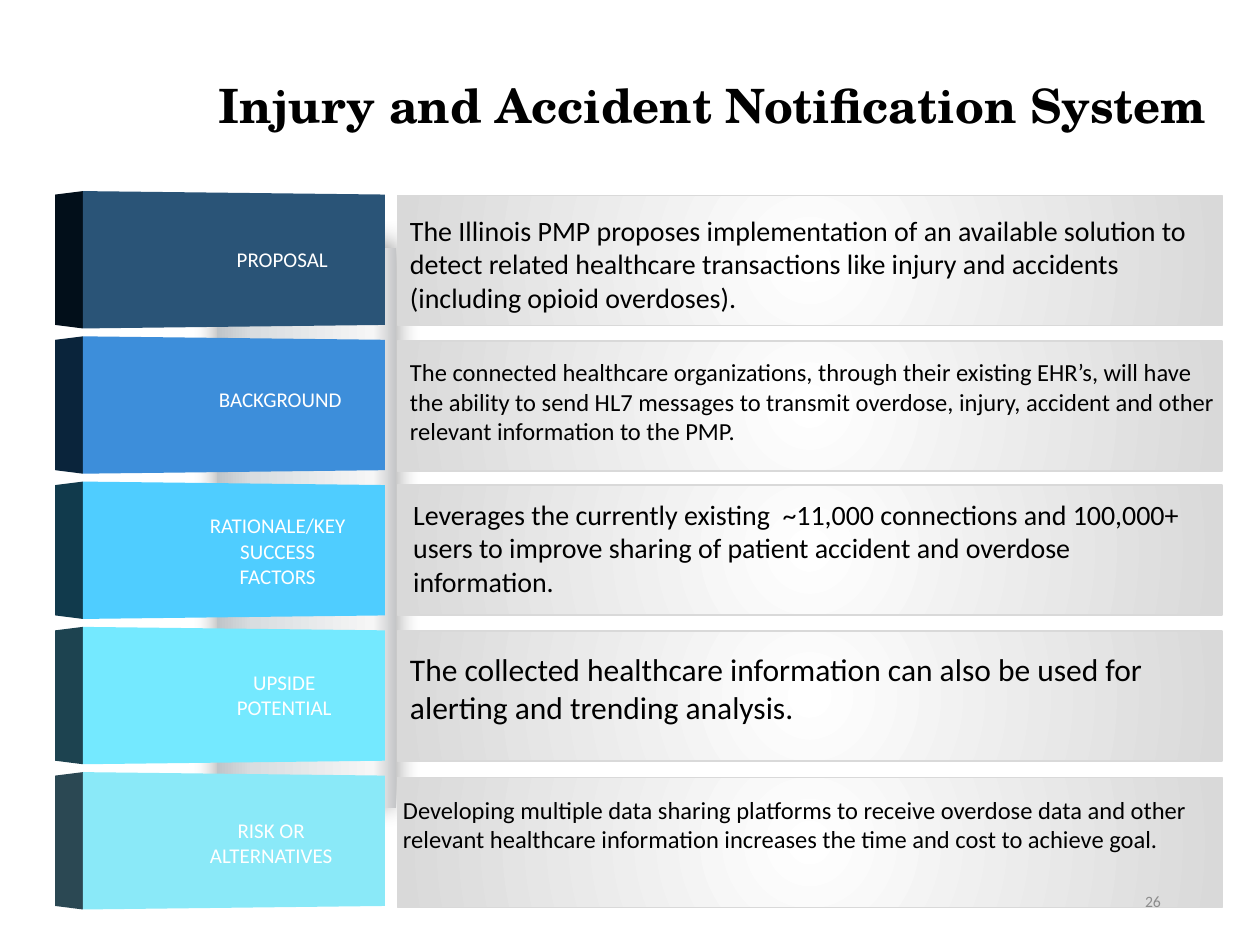
from dataclasses import dataclass

from pptx import Presentation
from pptx.dml.color import RGBColor
from pptx.enum.shapes import MSO_SHAPE
from pptx.enum.text import MSO_ANCHOR, MSO_AUTO_SIZE, PP_ALIGN
from pptx.oxml import parse_xml
from pptx.oxml.ns import nsdecls
from pptx.util import Pt

RECTANGLE = MSO_SHAPE.RECTANGLE
LEFT, CENTER, RIGHT = PP_ALIGN.LEFT, PP_ALIGN.CENTER, PP_ALIGN.RIGHT
TOP, MIDDLE = MSO_ANCHOR.TOP, MSO_ANCHOR.MIDDLE
FIT_SHAPE, NO_FIT = MSO_AUTO_SIZE.SHAPE_TO_FIT_TEXT, MSO_AUTO_SIZE.NONE


@dataclass(frozen=True)
class Theme:
    title_font: str = "TeX Gyre Schola"
    body_font: str = "Calibri"
    title_size: int = 27
    label_size: int = 12
    number_size: int = 9
    ink: str = "000000"
    label_ink: str = "FFFFFF"
    number_ink: str = "8C8C8C"
    panel_line: str = "D9D9D9"
    panel_stops: tuple = ((0, "FFFFFF"), (100, "D9D9D9"))
    spine_stops: tuple = ((0, "BFC4C8"), (20, "D9DDE0"), (87, "F6F6F6"), (100, "C5C6C8"))
    # Front face and side face of each bar
    bars: tuple = (
        ("2A5477", "020F1A"),
        ("3D8EDA", "0A243B"),
        ("4FCDFF", "113A4C"),
        ("74E9FF", "1D4350"),
        ("8AE9F8", "2B4853"),
    )


LINEAR = '<a:lin ang="0" scaled="0"/>'
RADIAL = '<a:path path="circle"><a:fillToRect l="50000" t="50000" r="50000" b="50000"/></a:path>'


class SlideBuilder:
    def __init__(self, slide, theme):
        self.slide = slide
        self.theme = theme

    def gradient_box(self, left, top, width, height, stops, shade, line=None):
        shape = self.slide.shapes.add_shape(RECTANGLE, Pt(left), Pt(top), Pt(width), Pt(height))
        shape.shadow.inherit = False
        shape.fill.background()
        stop_xml = "".join(
            f'<a:gs pos="{position * 1000}"><a:srgbClr val="{color}"/></a:gs>'
            for position, color in stops
        )
        gradient = parse_xml(
            f'<a:gradFill {nsdecls("a")} rotWithShape="1"><a:gsLst>{stop_xml}</a:gsLst>{shade}</a:gradFill>'
        )
        properties = shape._element.spPr
        properties.replace(properties.find("{*}noFill"), gradient)
        if line:
            shape.line.color.rgb = RGBColor.from_string(line)
            shape.line.width = Pt(1)
        else:
            shape.line.fill.background()
        return shape

    def add_shadow(self, shape):
        effects = shape._element.spPr.find("{*}effectLst")
        effects.append(parse_xml(
            f'<a:outerShdw {nsdecls("a")} blurRad="{Pt(14)}" dist="{Pt(3)}" dir="16200000">'
            '<a:srgbClr val="000000"><a:alpha val="40000"/></a:srgbClr></a:outerShdw>'
        ))

    def face(self, points, color):
        first, *others = [(Pt(x), Pt(y)) for x, y in points]
        builder = self.slide.shapes.build_freeform(*first)
        builder.add_line_segments(others, close=True)
        shape = builder.convert_to_shape()
        shape.shadow.inherit = False
        shape.fill.solid()
        shape.fill.fore_color.rgb = RGBColor.from_string(color)
        shape.line.fill.background()

    def bar(self, top, height, front, side):
        """Block in perspective: the shared edge is the tallest one."""
        left, edge, right, rise = 31.5, 47.4, 220, 2
        bottom = top + height
        for outer, color in ((left, side), (right, front)):
            self.face(
                [(edge, top - rise), (outer, top), (outer, bottom), (edge, bottom + rise)],
                color,
            )

    def text(self, left, top, width, height, words, size, color, font=None,
             bold=False, align=LEFT, anchor=TOP, fit=FIT_SHAPE):
        shape = self.slide.shapes.add_textbox(Pt(left), Pt(top), Pt(width), Pt(height))
        frame = shape.text_frame
        frame.word_wrap = True
        frame.auto_size = fit
        frame.vertical_anchor = anchor
        frame.text = words
        paragraph = frame.paragraphs[0]
        paragraph.alignment = align
        paragraph.font.name = font or self.theme.body_font
        paragraph.font.size = Pt(size)
        paragraph.font.bold = bold
        paragraph.font.color.rgb = RGBColor.from_string(color)


# Label: words, left, top, width, height, alignment
LABELS = (
    ("PROPOSAL", 128.2, 137.5, 75, 22, LEFT),
    ("BACKGROUND", 118, 217.5, 102, 22, LEFT),
    ("RATIONALE/KEY SUCCESS FACTORS", 107.7, 289.5, 102, 51, CENTER),
    ("UPSIDE\vPOTENTIAL", 111.5, 379.2, 102, 36, CENTER),
    ("RISK OR ALTERNATIVES", 104, 463.5, 102, 36, CENTER),
)

# Detail: words, size, left, top, width, height
DETAILS = (
    ("The Illinois PMP proposes implementation of an available solution to detect related "
     "healthcare transactions like injury and accidents (including opioid overdoses).",
     16, 227.2, 118.4, 481, 83.5),
    ("The connected healthcare organizations, through their existing EHR’s, will have the ability "
     "to send HL7 messages to transmit overdose, injury, accident and other relevant information "
     "to the PMP.",
     14, 227.2, 200.6, 481, 58),
    ("Leverages the currently existing  ~11,000 connections and 100,000+ users to improve sharing "
     "of patient accident and overdose information.",
     16, 229, 280.7, 467, 65.5),
    ("The collected healthcare information can also be used for alerting and trending analysis.",
     18, 227.2, 368, 481, 87),
    ("Developing multiple data sharing platforms to receive overdose data and other relevant "
     "healthcare information increases the time and cost to achieve goal.",
     14, 223.2, 450.5, 484.5, 41),
)

BAR_TOP, BAR_STEP, BAR_HEIGHT = 111.2, 83, 74.5
PANEL_TOPS = (111.8, 195, 277.2, 360.6, 444.4)


def main():
    theme = Theme()
    presentation = Presentation()
    presentation.slide_width, presentation.slide_height = Pt(720), Pt(540)
    slide = presentation.slides.add_slide(presentation.slide_layouts[6])
    builder = SlideBuilder(slide, theme)

    # Title
    builder.text(118, 40.2, 584, 40.5, "Injury and Accident Notification System",
                 theme.title_size, theme.ink, theme.title_font, bold=True)

    # Spine behind the bars
    spine = builder.gradient_box(124, 142, 102.5, 320, theme.spine_stops, LINEAR)
    builder.add_shadow(spine)

    # Bars and panels, one pair a row
    for row, ((front, side), panel_top) in enumerate(zip(theme.bars, PANEL_TOPS)):
        builder.bar(BAR_TOP + row * BAR_STEP, BAR_HEIGHT, front, side)
        builder.gradient_box(227.2, panel_top, 471, 74.2,
                             theme.panel_stops, RADIAL, theme.panel_line)

    # Labels on the bars
    for words, left, top, width, height, align in LABELS:
        builder.text(left, top, width, height, words, theme.label_size, theme.label_ink, align=align)

    # Details on the panels
    for words, size, left, top, width, height in DETAILS:
        builder.text(left, top, width, height, words, size, theme.ink)

    # Slide number
    builder.text(508.5, 500.5, 162, 29, "26", theme.number_size, theme.number_ink,
                 align=RIGHT, anchor=MIDDLE, fit=NO_FIT)

    presentation.save("out.pptx")


if __name__ == "__main__":
    main()
